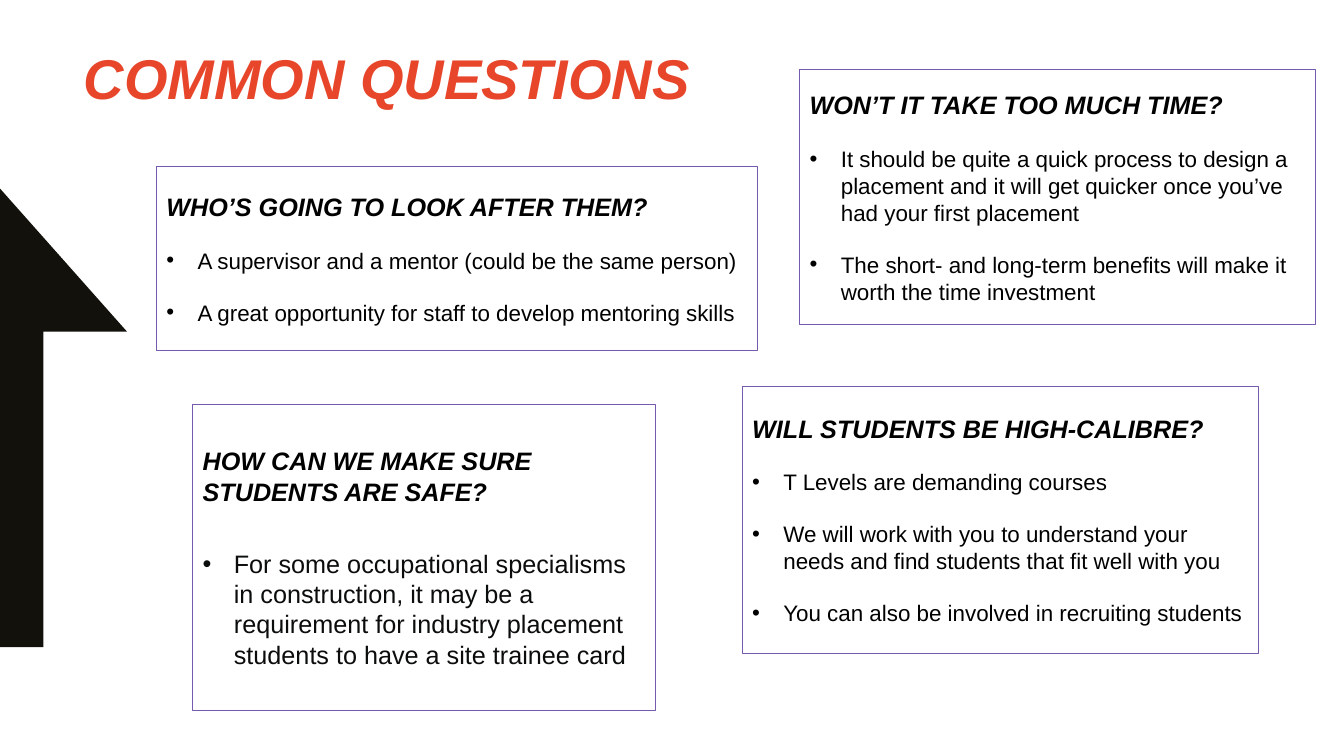
from lxml.etree import SubElement
from pptx import Presentation
from pptx.dml.color import RGBColor
from pptx.enum.text import MSO_ANCHOR, MSO_AUTO_SIZE, PP_ALIGN
from pptx.oxml.ns import qn
from pptx.util import Pt

PX = 9144
WIDE, HIGH = 1333, 750
INDENT = 31
RED = RGBColor(0xE8, 0x46, 0x2B)
BLACK = RGBColor(0, 0, 0)
INK = RGBColor(0x0B, 0x0C, 0x0C)
DARK = RGBColor(0x12, 0x11, 0x0C)
PURPLE = RGBColor(0x76, 0x5A, 0xB0)

TITLE = "COMMON QUESTIONS"
TITLE_AT = (73, 38, 1181, 142)
ARROW = [(43, 329), (126, 329), (0, 187), (0, 642), (43, 642)]
TIGHT = {"size": 16, "color": BLACK, "before": 9, "after": 9}
LOOSE = {"size": 18, "color": INK, "before": 24, "after": 6}
BOXES = [
    ((155, 165, 596, 183), TIGHT, "WHO’S GOING TO LOOK AFTER THEM?", [
        "A supervisor and a mentor (could be the same person)",
        "A great opportunity for staff to develop mentoring skills"]),
    ((793, 69, 512, 253), TIGHT, "WON’T IT TAKE TOO MUCH TIME?", [
        "It should be quite a quick process to design a placement and it will "
        "get quicker once you’ve had your first placement",
        "The short- and long-term benefits will make it worth the time investment"]),
    ((736, 383, 512, 265), TIGHT, "WILL STUDENTS BE HIGH-CALIBRE?", [
        "T Levels are demanding courses",
        "We will work with you to understand your needs and find students that "
        "fit well with you",
        "You can also be involved in recruiting students"]),
    ((191, 401, 459, 304), LOOSE, "HOW CAN WE MAKE SURE STUDENTS ARE SAFE?", [
        "For some occupational specialisms in construction, it may be a "
        "requirement for industry placement students to have a site trainee card"]),
]


def assign(item, **vals):
    for name, val in vals.items():
        setattr(item, name, val)


def place(shape, at, anchor):
    names = ("left", "top", "width", "height")
    assign(shape, **{name: n * PX for name, n in zip(names, at)})
    assign(shape.text_frame, word_wrap=True, auto_size=MSO_AUTO_SIZE.NONE,
           vertical_anchor=anchor)


def style(para, size, color, strong):
    para.alignment = PP_ALIGN.LEFT
    assign(para.font, name="Arial", size=Pt(size), bold=strong, italic=strong)
    para.font.color.rgb = color


def mark(para, listed):
    props = para._p.get_or_add_pPr()
    inset = INDENT * PX if listed else 0
    props.set("marL", str(inset))
    props.set("indent", str(-inset))
    if listed:
        SubElement(props, qn("a:buFont")).set("typeface", "Arial")
        SubElement(props, qn("a:buChar")).set("char", "•")
    else:
        SubElement(props, qn("a:buNone"))


def fill_box(shape, at, look, head, points):
    place(shape, at, MSO_ANCHOR.MIDDLE)
    shape.line.color.rgb = PURPLE
    shape.line.width = Pt(0.75)
    frame = shape.text_frame
    for row, text in enumerate([head] + points):
        para = frame.add_paragraph() if row else frame.paragraphs[0]
        para.text = text
        mark(para, row > 0)
        assign(para, line_spacing=1.0, space_after=Pt(look["after"]),
               space_before=Pt(look["before"] if row else 0))
        if row:
            style(para, look["size"], look["color"], False)
        else:
            style(para, 18, BLACK, True)


def draw_arrow(slide):
    pen = slide.shapes.build_freeform(*ARROW[0], scale=PX)
    pen.add_line_segments(ARROW[1:], close=True)
    arrow = pen.convert_to_shape()
    arrow.shadow.inherit = False
    arrow.fill.solid()
    arrow.fill.fore_color.rgb = DARK
    arrow.line.fill.background()


def main():
    """Build the common questions slide."""
    deck = Presentation()
    assign(deck, slide_width=WIDE * PX, slide_height=HIGH * PX)
    slide = deck.slides.add_slide(deck.slide_layouts.get_by_name("Comparison"))
    title, *bodies = slide.placeholders
    draw_arrow(slide)
    place(title, TITLE_AT, MSO_ANCHOR.TOP)
    title.text_frame.text = TITLE
    style(title.text_frame.paragraphs[0], 40, RED, True)
    for body, box in zip(bodies, BOXES):
        fill_box(body, *box)
    deck.save("out.pptx")


if __name__ == "__main__":
    main()
